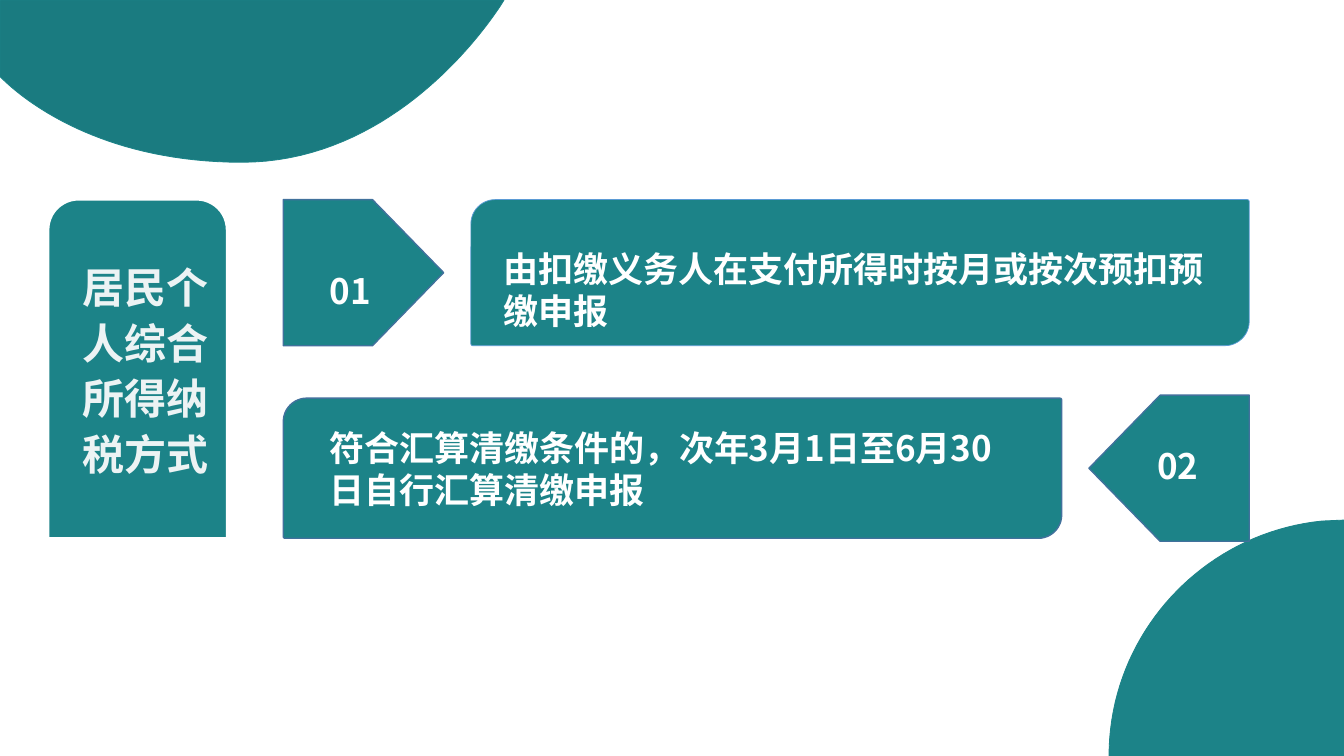
from dataclasses import dataclass

import lxml.etree
import pptx
import pptx.dml.color
import pptx.enum.shapes
import pptx.enum.text
import pptx.oxml.ns
import pptx.util

Inches = pptx.util.Inches
MSO = pptx.enum.shapes.MSO_SHAPE
Point = tuple[float, float]

TEAL, DARK_TEAL, WHITE, PALE = "1C8388", "1A7B80", "FFFFFF", "ECF3F4"
NAVY, BLUE = "41719C", "5B9BD5"
CJK = "Noto Sans CJK SC"


@dataclass
class Panel:
    kind: MSO
    box: tuple[float, float, float, float]
    adjustments: tuple[float, ...]
    line: str = NAVY
    line_pt: float = 1
    rotation: float = 0


@dataclass
class Label:
    text: str
    box: tuple[float, float, float, float]
    size: float = 25
    font: str = CJK
    color: str = WHITE
    spacing: float = 1.0


def rgb(color: str) -> pptx.dml.color.RGBColor:
    return pptx.dml.color.RGBColor.from_string(color)


def paint(sp, fill: str, line: str, line_pt: float) -> None:
    sp.shadow.inherit = False
    sp.fill.solid()
    sp.fill.fore_color.rgb = rgb(fill)
    sp.line.color.rgb = rgb(line)
    sp.line.width = pptx.util.Pt(line_pt)


def curve(a: Point, b: Point, c: Point, d: Point, steps: int = 40) -> list[Point]:
    """Points along a cubic Bezier curve, leaving out its start."""
    points = []
    for i in range(1, steps + 1):
        t = i / steps
        weights = ((1 - t) ** 3, 3 * t * (1 - t) ** 2, 3 * t * t * (1 - t), t ** 3)
        x, y = (sum(w * q[k] for w, q in zip(weights, (a, b, c, d))) for k in (0, 1))
        points.append((x, y))
    return points


def add_outline(s, points: list[Point], fill: str) -> None:
    corners = [(Inches(x), Inches(y)) for x, y in points]
    builder = s.shapes.build_freeform(*corners[0])
    builder.add_line_segments(corners[1:], close=True)
    paint(builder.convert_to_shape(), fill, TEAL, 0.6)


def add_panel(s, panel: Panel) -> None:
    sp = s.shapes.add_shape(panel.kind, *map(Inches, panel.box))
    for i, value in enumerate(panel.adjustments):
        sp.adjustments[i] = value
    sp.rotation = panel.rotation
    paint(sp, TEAL, panel.line, panel.line_pt)


def add_label(s, label: Label) -> None:
    tf = s.shapes.add_textbox(*map(Inches, label.box)).text_frame
    tf.word_wrap = True
    tf.auto_size = pptx.enum.text.MSO_AUTO_SIZE.SHAPE_TO_FIT_TEXT
    p = tf.paragraphs[0]
    p.line_spacing = label.spacing
    r = p.add_run()
    r.text = label.text
    r.font.size = pptx.util.Pt(label.size)
    r.font.name = label.font
    r.font.bold = True
    r.font.color.rgb = rgb(label.color)
    east_asian = lxml.etree.SubElement(r.font._element, pptx.oxml.ns.qn("a:ea"))
    east_asian.set("typeface", CJK)


# Corner decorations
TOP_LEFT = [
    (0, 0.76), (0, 0), (5, 0),
    *curve((5, 0), (5, 0), (4.05, 1.61), (2.4, 1.61)),
    *curve((2.4, 1.61), (0.75, 1.61), (0.01, 0.76), (0, 0.76)),
]
BOTTOM_RIGHT = [
    (13.33, 5.16), (13.33, 7.5), (11, 7.5),
    *curve((11, 7.5), (11, 6.29), (11.93, 5.29), (13.11, 5.17)),
]

# Title block, then the two steps
PANELS = [
    Panel(MSO.ROUND_2_SAME_RECTANGLE, (0.48, 1.98, 1.77, 3.36), (0.169, 0), WHITE, 1.5),
    Panel(MSO.PENTAGON, (2.81, 1.98, 1.59, 1.45), (0.487,)),
    Panel(MSO.ROUND_2_DIAG_RECTANGLE, (4.67, 1.98, 7.72, 1.45), (0.167, 0.014), BLUE, 0.5),
    Panel(MSO.ROUND_2_DIAG_RECTANGLE, (2.81, 3.95, 7.72, 1.39), (0.167, 0.012)),
    Panel(MSO.PENTAGON, (10.8, 3.92, 1.59, 1.45), (0.487,), rotation=180),
]
LABELS = [
    Label("居民个人综合所得纳税方式", (0.72, 2.5, 1.54, 2.25), 30, "Arial", PALE, 1.1),
    Label("01", (3.17, 2.62, 0.86, 0.51)),
    Label("由扣缴义务人在支付所得时按月或按次预扣预缴申报", (4.9, 2.41, 7.26, 0.91)),
    Label("符合汇算清缴条件的，次年3月1日至6月30日自行汇算清缴申报", (3.17, 4.18, 7.04, 0.91)),
    Label("02", (11.38, 4.36, 0.86, 0.51)),
]


def main() -> None:
    prs = pptx.Presentation()
    prs.slide_width, prs.slide_height = Inches(13.33), Inches(7.5)
    s = prs.slides.add_slide(prs.slide_layouts[6])
    add_outline(s, TOP_LEFT, DARK_TEAL)
    add_outline(s, BOTTOM_RIGHT, TEAL)
    for panel in PANELS:
        add_panel(s, panel)
    for label in LABELS:
        add_label(s, label)
    prs.save("out.pptx")


if __name__ == "__main__":
    main()
